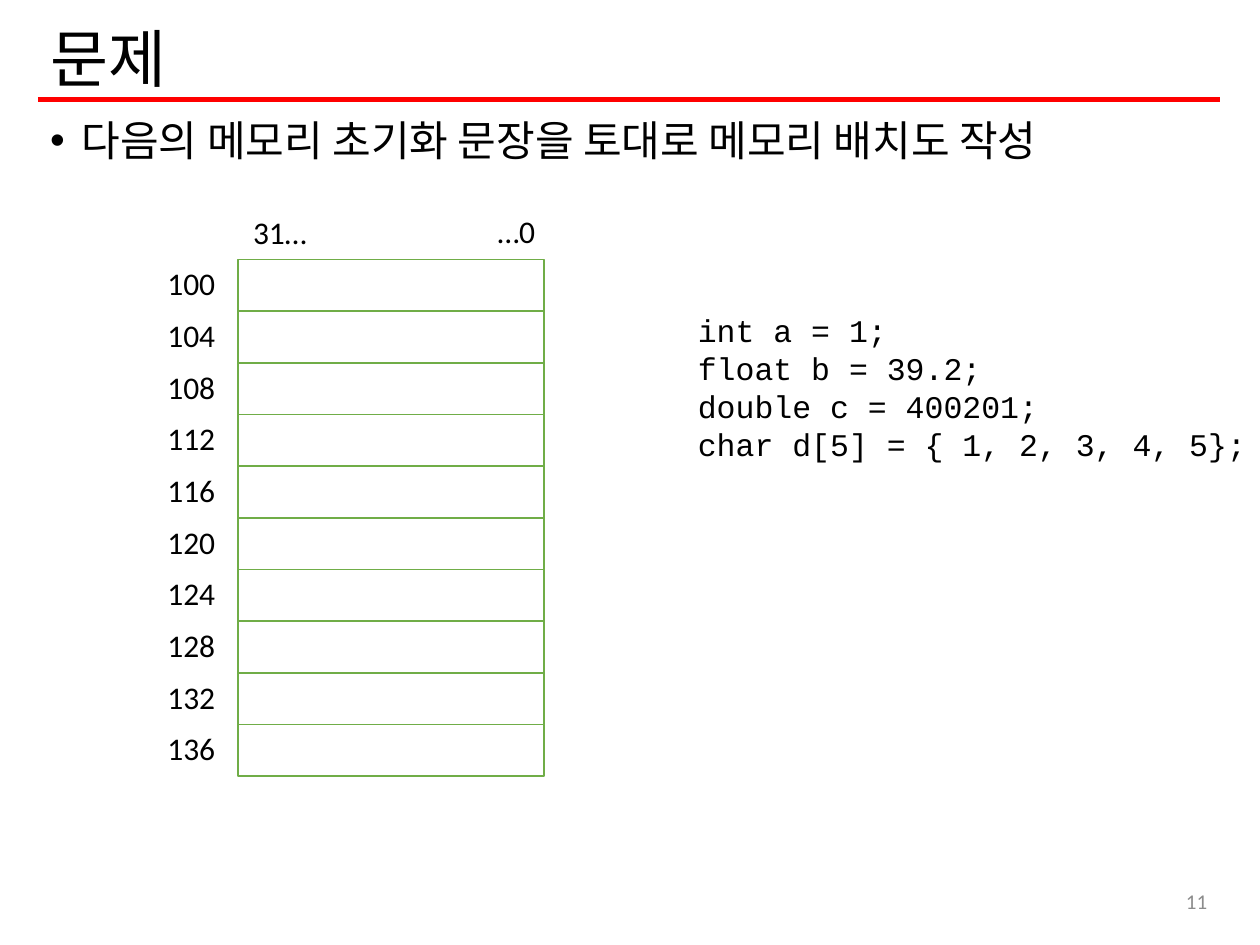
from dataclasses import dataclass

from lxml.etree import SubElement
from pptx import Presentation
from pptx.dml.color import RGBColor
from pptx.enum.shapes import MSO_CONNECTOR, MSO_SHAPE
from pptx.enum.text import MSO_ANCHOR, MSO_AUTO_SIZE, PP_ALIGN
from pptx.oxml.ns import qn
from pptx.util import Emu, Pt

PX = 9144  # EMU per px, 100 px to the inch
BLACK, WHITE, RED, GREEN, GRAY = "000000", "FFFFFF", "FF0000", "70AD47", "8C8C8C"

CELL_LEFT, CELL_TOP, CELL_WIDTH, CELL_HEIGHT = 189, 206, 243, 41
FIRST_ADDRESS, WORD_BYTES, WORD_COUNT = 100, 4, 10


@dataclass(frozen=True)
class Box:
    left: int
    top: int
    width: int
    height: int

    def emu(self) -> list[Emu]:
        return [px(n) for n in (self.left, self.top, self.width, self.height)]


@dataclass(frozen=True)
class Label:
    text: str
    box: Box
    size: int = 18
    font: str = "Calibri"
    color: str = BLACK
    align: PP_ALIGN = PP_ALIGN.LEFT
    anchor: MSO_ANCHOR = MSO_ANCHOR.TOP
    wrap: bool = False


def px(length: int) -> Emu:
    return Emu(length * PX)


def rgb(color: str) -> RGBColor:
    return RGBColor.from_string(color)


def write(shape, label: Label) -> None:
    """Place a text shape and fill it with the formatted label."""
    shape.left, shape.top, shape.width, shape.height = label.box.emu()
    frame = shape.text_frame
    frame.text = label.text
    frame.word_wrap = label.wrap
    frame.auto_size = MSO_AUTO_SIZE.NONE if label.wrap else MSO_AUTO_SIZE.SHAPE_TO_FIT_TEXT
    frame.vertical_anchor = label.anchor
    for paragraph in frame.paragraphs:
        paragraph.alignment = label.align
        for run in paragraph.runs:
            run.font.size = Pt(label.size)
            run.font.name = label.font
            run.font.color.rgb = rgb(label.color)


def add_label(slide, label: Label):
    shape = slide.shapes.add_textbox(*label.box.emu())
    write(shape, label)
    return shape


def add_cell(slide, box: Box) -> None:
    cell = slide.shapes.add_shape(MSO_SHAPE.RECTANGLE, *box.emu())
    cell.shadow.inherit = False
    cell.fill.solid()
    cell.fill.fore_color.rgb = rgb(WHITE)
    cell.line.color.rgb = rgb(GREEN)
    cell.line.width = Pt(1)


def add_rule(slide, left: int, right: int, y: int) -> None:
    rule = slide.shapes.add_connector(
        MSO_CONNECTOR.STRAIGHT, px(left), px(y), px(right), px(y))
    rule.line.color.rgb = rgb(RED)
    rule.line.width = Pt(3)
    SubElement(rule.element.spPr, qn("a:effectLst"))


def add_bullet(paragraph, indent: int) -> None:
    properties = paragraph._p.get_or_add_pPr()
    properties.set("marL", str(px(indent)))
    properties.set("indent", str(-px(indent)))
    SubElement(properties, qn("a:buFont"), typeface="Arial")
    SubElement(properties, qn("a:buChar"), char="•")


def main() -> None:
    presentation = Presentation()
    presentation.slide_width, presentation.slide_height = px(1000), px(750)
    slide = presentation.slides.add_slide(presentation.slide_layouts[5])

    # Title and its rule
    add_rule(slide, 30, 968, 79)
    title = slide.shapes.title
    write(title, Label("문제", Box(30, 27, 938, 45), size=36,
                       anchor=MSO_ANCHOR.MIDDLE, wrap=True))
    title.text_frame.paragraphs[0].line_spacing = 0.9

    # Task
    task = add_label(slide, Label("다음의 메모리 초기화 문장을 토대로 메모리 배치도 작성",
                                  Box(30, 86, 938, 592), size=24, wrap=True))
    task_paragraph = task.text_frame.paragraphs[0]
    task_paragraph.space_before = Pt(10)
    add_bullet(task_paragraph, 25)

    # Memory map: bit numbers above, one addressed row per word
    add_label(slide, Label("31…", Box(191, 164, 65, 40)))
    add_label(slide, Label("…0", Box(385, 163, 52, 40)))
    for word in range(WORD_COUNT):
        top = CELL_TOP + word * CELL_HEIGHT
        add_cell(slide, Box(CELL_LEFT, top, CELL_WIDTH, CELL_HEIGHT))
        address = FIRST_ADDRESS + word * WORD_BYTES
        add_label(slide, Label(str(address), Box(123, top - 1, 59, 40)))

    # Declarations to lay out
    declarations = "\n".join([
        "int a = 1;",
        "float b = 39.2;",
        "double c = 400201;",
        "char d[5] = { 1, 2, 3, 4, 5};",
    ])
    add_label(slide, Label(declarations, Box(544, 242, 457, 131), font="Courier New"))

    # Page number
    add_label(slide, Label("11", Box(706, 695, 262, 40), size=12, color=GRAY,
                           align=PP_ALIGN.RIGHT, anchor=MSO_ANCHOR.MIDDLE, wrap=True))

    presentation.save("out.pptx")


if __name__ == "__main__":
    main()
